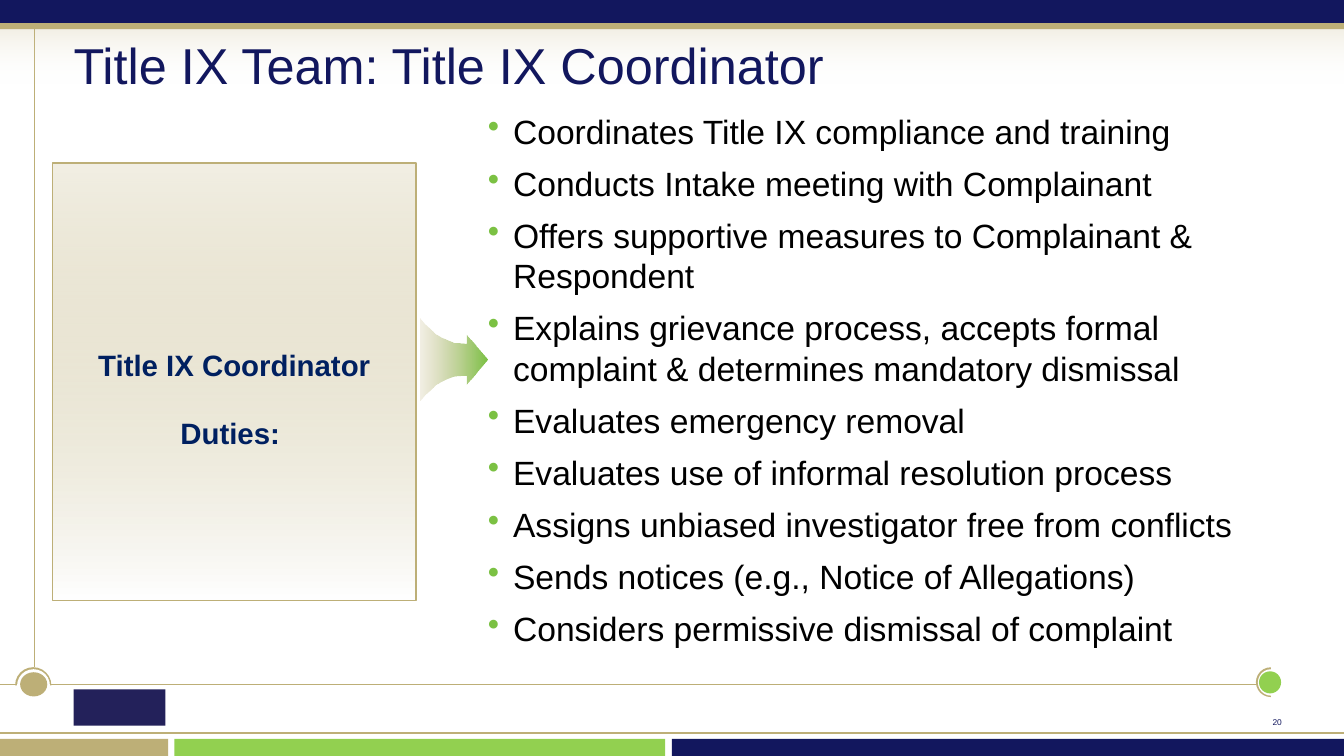
"""Build the Title IX Coordinator slide."""
from lxml.etree import SubElement
from pptx import Presentation
from pptx.dml.color import RGBColor
from pptx.enum.shapes import MSO_CONNECTOR, MSO_SHAPE
from pptx.enum.text import MSO_ANCHOR, PP_ALIGN
from pptx.oxml.ns import qn
from pptx.util import Pt

NAVY, GOLD, LIME, LEAF, WHITE = "12175E", "BDAF77", "92D050", "7BC143", "FFFFFF"
WIDE, HIGH = 960, 540
DUTIES = [
    "Coordinates Title IX compliance and training",
    "Conducts Intake meeting with Complainant",
    "Offers supportive measures to Complainant & Respondent",
    "Explains grievance process, accepts formal complaint & determines mandatory dismissal",
    "Evaluates emergency removal",
    "Evaluates use of informal resolution process",
    "Assigns unbiased investigator free from conflicts",
    "Sends notices (e.g., Notice of Allegations)",
    "Considers permissive dismissal of complaint",
]
CURVE = [(33.1, 18), (24, 17.3), (19.5, 15.5), (15, 13.5), (11, 11),
         (7.2, 7.5), (3.5, 4), (0, 0)]


def tint(code):
    """Turn a hex string into a colour."""
    return RGBColor.from_string(code)


def paint(item, fill, line=None):
    """Give a shape a plain fill and an optional outline."""
    item.shadow.inherit = False
    item.fill.solid()
    item.fill.fore_color.rgb = tint(fill)
    if line:
        item.line.color.rgb = tint(line)
        item.line.width = Pt(1)
    else:
        item.line.fill.background()
    return item


def blend(item, stops, angle):
    """Give a shape a gradient of (hex, opacity percent) stops."""
    item.fill.gradient()
    item.fill.gradient_angle = angle
    for stop, (code, _) in zip(item.fill.gradient_stops, stops):
        stop.color.rgb = tint(code)
    grad = item._element.spPr.find(qn("a:gradFill"))
    for node, (_, alpha) in zip(grad.iter(qn("a:srgbClr")), stops):
        SubElement(node, qn("a:alpha"), val=str(alpha * 1000))


def shape(slide, box, fill, kind=MSO_SHAPE.RECTANGLE, line=None):
    """Add a preset shape in a box."""
    return paint(slide.shapes.add_shape(kind, *map(Pt, box)), fill, line)


def rule(slide, *ends):
    """Draw a thin gold line."""
    line = slide.shapes.add_connector(MSO_CONNECTOR.STRAIGHT, *map(Pt, ends))
    line.line.color.rgb = tint(GOLD)
    line.line.width = Pt(1)
    SubElement(line._element.spPr, qn("a:effectLst"))


def write(frame, lines, size, color, anchor=MSO_ANCHOR.TOP, inset=0,
          bold=False, wrap=True, bullet=None, **form):
    """Fill a text frame with styled paragraphs."""
    values = dict.fromkeys(
        ("margin_left", "margin_top", "margin_right", "margin_bottom"), Pt(inset))
    values.update(word_wrap=wrap, vertical_anchor=anchor)
    for name, value in values.items():
        setattr(frame, name, value)
    for index, text in enumerate(lines):
        para = frame.paragraphs[0] if index == 0 else frame.add_paragraph()
        for name, value in form.items():
            if index or name != "space_before":
                setattr(para, name, value)
        if bullet:
            props = para._p.get_or_add_pPr()
            props.set("marL", str(Pt(18)))
            props.set("indent", str(-Pt(18)))
            hue = SubElement(props, qn("a:buClr"))
            SubElement(hue, qn("a:srgbClr"), val=bullet)
            SubElement(props, qn("a:buChar"), char="•")
        run = para.add_run()
        run.text = text
        look = {"name": "Arial", "size": Pt(size), "bold": bold}
        for name, value in look.items():
            setattr(run.font, name, value)
        run.font.color.rgb = tint(color)


def label(slide, box, lines, size, color, **form):
    """Add a text box."""
    frame = slide.shapes.add_textbox(*map(Pt, box)).text_frame
    write(frame, lines, size, color, **form)


def header(slide, x, y, w, h):
    """Draw the top band with its gold strip and fade."""
    fade = shape(slide, (x, y + h + 2.9, w, 40.3), GOLD)
    blend(fade, [(GOLD, 20), (WHITE, 0)], 270)
    shape(slide, (x, y, w, h), NAVY)
    shape(slide, (x, y + h - 0.7, w, 4.3), GOLD)


def footer(slide, x, y, w, h):
    """Draw the bottom bars, the rule above them and the plain mark."""
    for left, right, fill in ((480, w, NAVY), (124.6, 475.2, LIME), (0, 120.2, GOLD)):
        shape(slide, (x + left, y, right - left, h), fill)
    rule(slide, x, y - 4.3, x + w, y - 4.3)
    shape(slide, (x + 52.6, y - 35.3, 65.5, 25.9), "23215A")


def knob(slide, x, y, size, dot, fill, turn=0):
    """Draw a half ring round a dot, whose box is relative to the ring."""
    ring = shape(slide, (x, y, size, size), GOLD, MSO_SHAPE.BLOCK_ARC)
    ring.rotation = turn
    side = size - 2.4
    shape(slide, (x + 1.4, y + 1.4, side, side), WHITE, MSO_SHAPE.OVAL)
    left, top, wide, high = dot
    shape(slide, (x + left, y + top, wide, high), fill, MSO_SHAPE.OVAL)


def panel(slide, x, y, w, h):
    """Draw the shaded panel that names the duties."""
    card = shape(slide, (x, y, w, h), GOLD, line=GOLD)
    blend(card, [(GOLD, 20), (WHITE, 100)], 270)
    write(card.text_frame, ["Title IX Coordinator Duties: "], 21, "002060",
          anchor=MSO_ANCHOR.MIDDLE, inset=3.6, bold=True,
          alignment=PP_ALIGN.CENTER, line_spacing=Pt(49))


def arrow(slide, x, y, w, h):
    """Draw the flared arrow from the panel to the list."""
    upper = [(w, h / 2), (33.1, 11.5)] + CURVE
    lower = [(px, h - py) for px, py in reversed(upper[1:])]
    dots = [(Pt(x + px), Pt(y + py)) for px, py in upper + lower]
    path = slide.shapes.build_freeform(*dots[0])
    path.add_line_segments(dots[1:], close=True)
    flare = paint(path.convert_to_shape(), LEAF)
    blend(flare, [(GOLD, 20), (LEAF, 100)], 0)


def main():
    """Build and save the slide."""
    deck = Presentation()
    deck.slide_width, deck.slide_height = Pt(WIDE), Pt(HIGH)
    slide = deck.slides.add_slide(deck.slide_layouts[6])
    knob(slide, 897.1, 476.6, 21.3, (2.2, 2.9, 15.8, 15.8), LIME, 270)
    rule(slide, 24.5, 476.6, 24.5, 0)
    header(slide, 0, 0, WIDE, 17.3)
    footer(slide, 0, 527.8, WIDE, 12.2)
    for start, end in ((0, 26.6), (36.7, 897.1)):
        rule(slide, start, 488.9, end, 488.9)
    knob(slide, 10.8, 476.6, 25.9, (3.6, 3.6, 19.4, 17.3), GOLD)
    label(slide, (52.6, 23.8, 871.2, 43.9), ["Title IX Team: Title IX Coordinator"],
          36, NAVY, anchor=MSO_ANCHOR.MIDDLE)
    label(slide, (348.5, 79.2, 576.7, 410.4), DUTIES, 24, "000000", bullet=LEAF,
          line_spacing=1.0, space_before=Pt(8.4))
    label(slide, (905.1, 509.5, 14.4, 12.2), ["20"], 6, NAVY, wrap=False,
          anchor=MSO_ANCHOR.MIDDLE, alignment=PP_ALIGN.CENTER)
    panel(slide, 37.4, 116.6, 259.9, 312.5)
    arrow(slide, 300.2, 227.5, 48.2, 58.3)
    deck.save("out.pptx")


if __name__ == "__main__":
    main()
